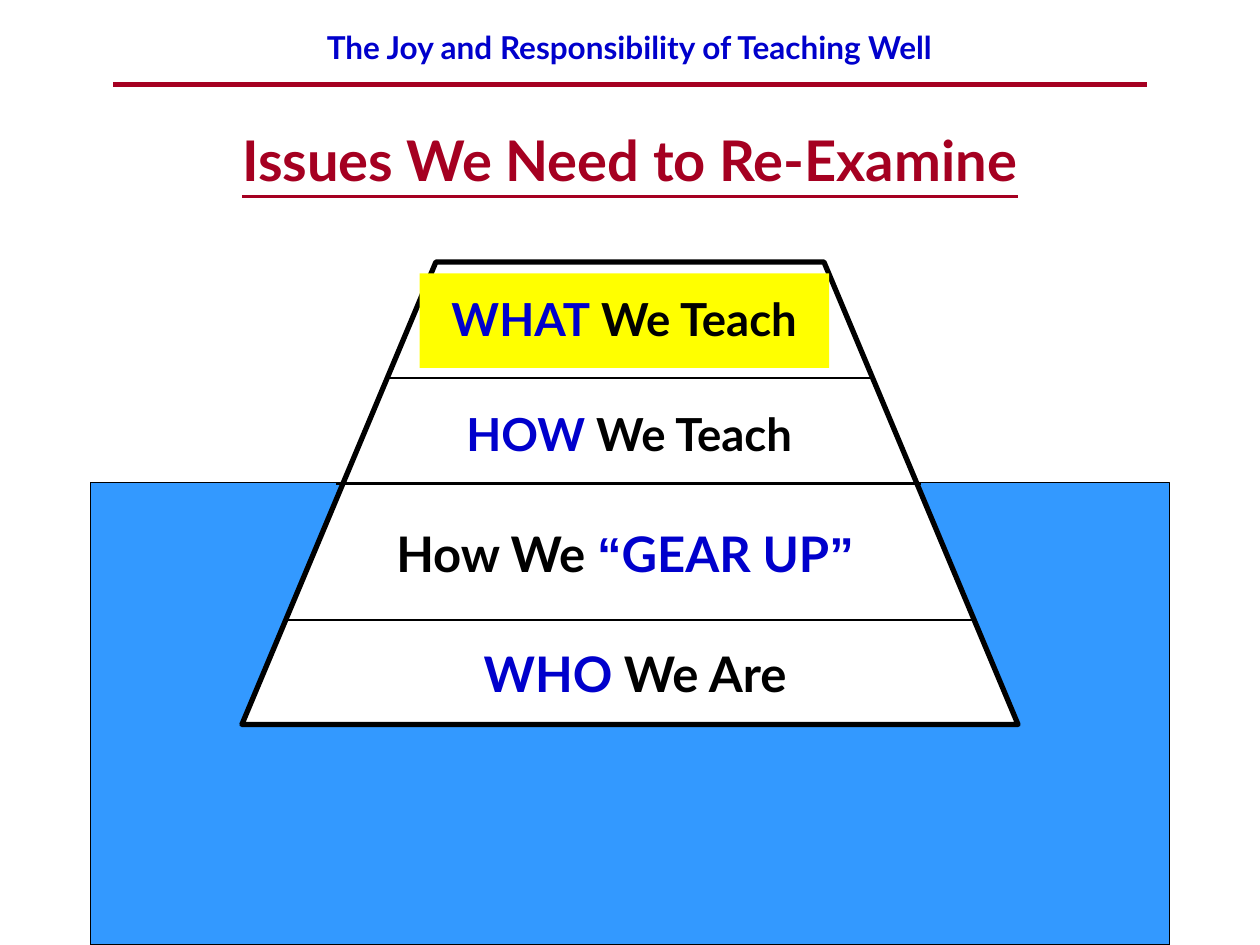
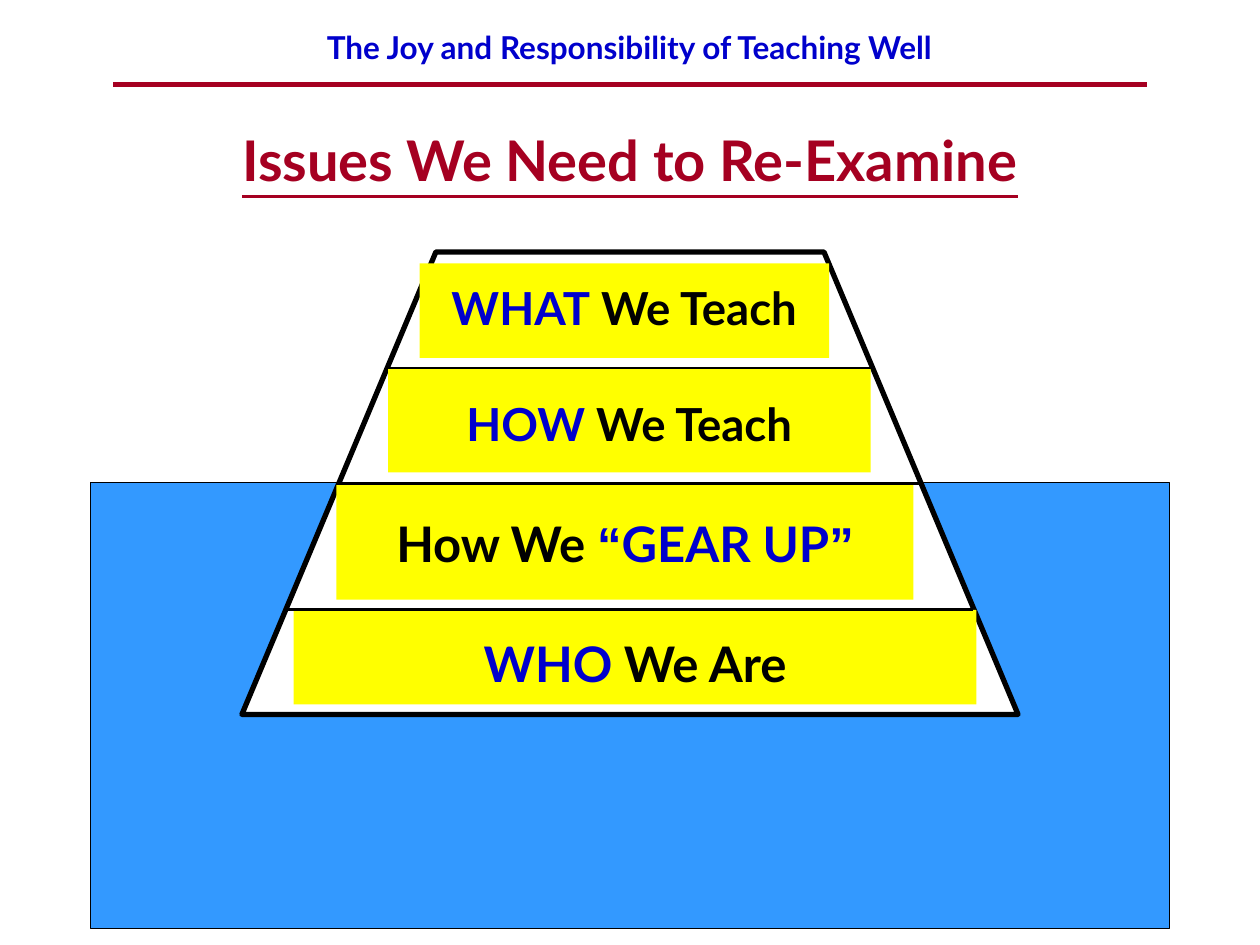
import pptx
import pptx.util
import pptx.dml.color
import pptx.enum.shapes
import pptx.enum.text
from pptx.util import Inches

# Shared look
BLUE = pptx.dml.color.RGBColor(0x00, 0x00, 0xCC)
CRIMSON = pptx.dml.color.RGBColor(0xA5, 0x00, 0x21)
WATER = pptx.dml.color.RGBColor(0x33, 0x99, 0xFF)
YELLOW = pptx.dml.color.RGBColor(0xFF, 0xFF, 0x00)
WHITE = pptx.dml.color.RGBColor(0xFF, 0xFF, 0xFF)
BLACK = pptx.dml.color.RGBColor(0x00, 0x00, 0x00)
FONT = "Lato"
QUOTE_FONT = "Arial"

# Iceberg layers from the tip down:
# left, offset below the tip, width, height, size, line spacing, runs (text, colour)
LAYERS = [
    (3.33, 0.09, 3.25, 0.75, 26, 1.2, [("WHAT", BLUE), (" We Teach", BLACK)]),
    (3.08, 0.92, 3.83, 0.83, 26, 1.4, [("HOW", BLUE), (" We Teach", BLACK)]),
    (2.67, 1.84, 4.58, 0.92, 28, 1.4,
     [("How We ", BLACK), ("“", BLUE), ("GEAR UP", BLUE), ("”", BLUE)]),
    (2.33, 2.84, 5.42, 0.75, 28, 1.3, [("WHO", BLUE), (" We Are", BLACK)]),
]
WATERLINE = 3.83
ICEBERG_HEIGHT = 3.67


def add_line(slide, left, right, y, color, weight):
    line = slide.shapes.add_connector(
        pptx.enum.shapes.MSO_CONNECTOR.STRAIGHT,
        Inches(left), Inches(y), Inches(right), Inches(y))
    line.line.color.rgb = color
    line.line.width = pptx.util.Pt(weight)
    line._element.spPr.append(pptx.oxml.parse_xml(
        '<a:effectLst xmlns:a="http://schemas.openxmlformats.org/drawingml/2006/main"/>'))


def style_shape(shape, fill, line_weight):
    shape.shadow.inherit = False
    shape.fill.solid()
    shape.fill.fore_color.rgb = fill
    if line_weight:
        shape.line.color.rgb = BLACK
        shape.line.width = pptx.util.Pt(line_weight)
    else:
        shape.line.fill.background()


def add_box(slide, left, top, width, height, fill, line_weight=0):
    box = slide.shapes.add_shape(
        pptx.enum.shapes.MSO_SHAPE.RECTANGLE,
        Inches(left), Inches(top), Inches(width), Inches(height))
    style_shape(box, fill, line_weight)
    return box


def add_text_area(slide, left, top, width, height):
    return slide.shapes.add_textbox(
        Inches(left), Inches(top), Inches(width), Inches(height))


def write_centred(area, runs, size, spacing=1.0):
    frame = area.text_frame
    frame.word_wrap = True
    frame.vertical_anchor = pptx.enum.text.MSO_ANCHOR.TOP
    paragraph = frame.paragraphs[0]
    paragraph.alignment = pptx.enum.text.PP_ALIGN.CENTER
    paragraph.line_spacing = spacing
    paragraph.font.name = FONT
    paragraph.font.size = pptx.util.Pt(size)
    paragraph.font.bold = True
    for text, color in runs:
        run = paragraph.add_run()
        run.text = text
        run.font.color.rgb = color
        if text in "“”":
            run.font.name = QUOTE_FONT
    return paragraph


def add_header(slide):
    write_centred(add_text_area(slide, 1.08, 0.17, 7.83, 0.4),
                  [("The Joy and Responsibility of Teaching Well", BLUE)], 18)
    add_line(slide, 0.9, 9.1, 0.67, CRIMSON, 3)


def add_title(slide):
    title = write_centred(add_text_area(slide, 1.31, 0.95, 7.38, 0.63),
                          [("Issues We Need to Re-Examine", CRIMSON)], 32)
    title.font.underline = True


def add_iceberg(slide, tip, highlighted):
    # Body
    bottom = tip + ICEBERG_HEIGHT
    outline = slide.shapes.build_freeform(Inches(1.92), Inches(bottom))
    outline.add_line_segments(
        [(Inches(x), Inches(y)) for x, y in [(3.46, tip), (6.54, tip), (8.08, bottom)]])
    style_shape(outline.convert_to_shape(), WHITE, 3)

    # Layer labels
    for index, (left, offset, width, height, size, spacing, runs) in enumerate(LAYERS):
        place = (left, tip + offset, width, height)
        if index in highlighted:
            label = add_box(slide, *place, YELLOW)
        else:
            label = add_text_area(slide, *place)
        write_centred(label, runs, size, spacing)

    # Dividers between layers, the middle one at the waterline
    for left, right, y in [(3.08, 6.92, tip + 0.92), (2.67, 7.31, WATERLINE + 0.01),
                           (2.25, 7.72, tip + 2.84)]:
        add_line(slide, left, right, y, BLACK, 1.5)


def add_iceberg_slide(deck, tip, sea_bottom, highlighted):
    slide = deck.slides.add_slide(deck.slide_layouts[6])
    add_header(slide)
    add_box(slide, 0.72, WATERLINE, 8.56, sea_bottom - WATERLINE, WATER, 0.75)
    add_iceberg(slide, tip, highlighted)
    add_title(slide)


def main():
    deck = pptx.Presentation()
    deck.slide_width, deck.slide_height = Inches(10), Inches(7.5)
    add_iceberg_slide(deck, tip=2.08, sea_bottom=7.5, highlighted={0})
    add_iceberg_slide(deck, tip=2.0, sea_bottom=7.37, highlighted={0, 1, 2, 3})
    deck.save("out.pptx")


if __name__ == "__main__":
    main()
